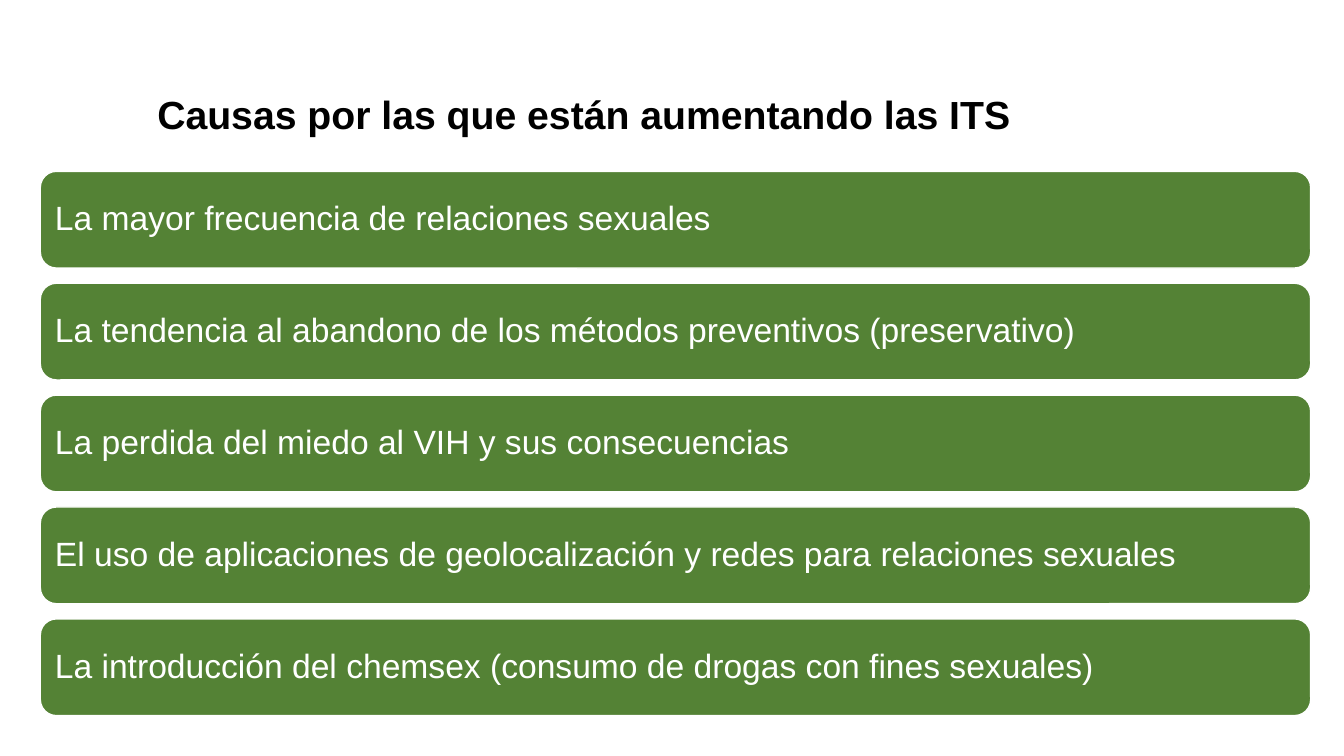
"""Build a slide listing the causes behind the rise of sexually transmitted infections."""
import pptx
import pptx.dml.color
import pptx.enum.shapes
import pptx.enum.text
import pptx.util

COLOURS = {"bar": "548235", "light": "FFFFFF", "title": "000000"}
FONT = "Arial"
WIDTH, HEIGHT = 13.33, 7.5
BAR_LEFT, BAR_WIDTH, BAR_HEIGHT = 0.4, 12.6, 0.96
FIRST_ROW, ROW_PITCH = 1.7, 1.11
TITLE = "Causas por las que están aumentando las ITS"
CAUSES = [
    "La mayor frecuencia de relaciones sexuales",
    "La tendencia al abandono de los métodos preventivos (preservativo)",
    "La perdida del miedo al VIH y sus consecuencias",
    "El uso de aplicaciones de geolocalización y redes para relaciones sexuales",
    "La introducción del chemsex (consumo de drogas con fines sexuales)",
]


def colour(name):
    """Return the named colour."""
    return pptx.dml.color.RGBColor.from_string(COLOURS[name])


def write(frame, text, size, ink, align, spacing, bold=False):
    """Write one formatted run into the first paragraph of a text frame."""
    frame.word_wrap = True
    para = frame.paragraphs[0]
    para.alignment = align
    para.line_spacing = spacing
    para.space_before = pptx.util.Pt(0)
    span = para.add_run()
    span.text = text
    span.font.name = FONT
    span.font.size = pptx.util.Pt(size)
    span.font.bold = bold
    span.font.color.rgb = colour(ink)


def place_title(page):
    """Move the title placeholder and fill it."""
    title = page.shapes.title
    title.left, title.top = pptx.util.Inches(1.46), pptx.util.Inches(0.78)
    title.width, title.height = pptx.util.Inches(10.42), pptx.util.Inches(0.63)
    frame = title.text_frame
    frame.auto_size = pptx.enum.text.MSO_AUTO_SIZE.SHAPE_TO_FIT_TEXT
    frame.vertical_anchor = pptx.enum.text.MSO_ANCHOR.TOP
    write(frame, TITLE, 28, "title", pptx.enum.text.PP_ALIGN.JUSTIFY, 1.15, True)


def add_cause(page, row, text):
    """Add the rounded bar of one cause at its row."""
    bar = page.shapes.add_shape(
        pptx.enum.shapes.MSO_SHAPE.ROUNDED_RECTANGLE,
        pptx.util.Inches(BAR_LEFT),
        pptx.util.Inches(FIRST_ROW + row * ROW_PITCH),
        pptx.util.Inches(BAR_WIDTH),
        pptx.util.Inches(BAR_HEIGHT),
    )
    bar.shadow.inherit = False
    bar.fill.solid()
    bar.fill.fore_color.rgb = colour("bar")
    bar.line.color.rgb = colour("light")
    bar.line.width = pptx.util.Pt(1)
    frame = bar.text_frame
    frame.vertical_anchor = pptx.enum.text.MSO_ANCHOR.MIDDLE
    frame.margin_left = frame.margin_right = pptx.util.Inches(0.1)
    frame.margin_top = frame.margin_bottom = pptx.util.Inches(0.1)
    write(frame, text, 24, "light", pptx.enum.text.PP_ALIGN.LEFT, 0.9)


def main():
    """Build and save the deck."""
    deck = pptx.Presentation()
    deck.slide_width = pptx.util.Inches(WIDTH)
    deck.slide_height = pptx.util.Inches(HEIGHT)
    page = deck.slides.add_slide(deck.slide_layouts.get_by_name("Title Only"))
    for row, text in enumerate(CAUSES):
        add_cause(page, row, text)
    place_title(page)
    deck.save("out.pptx")


if __name__ == "__main__":
    main()
